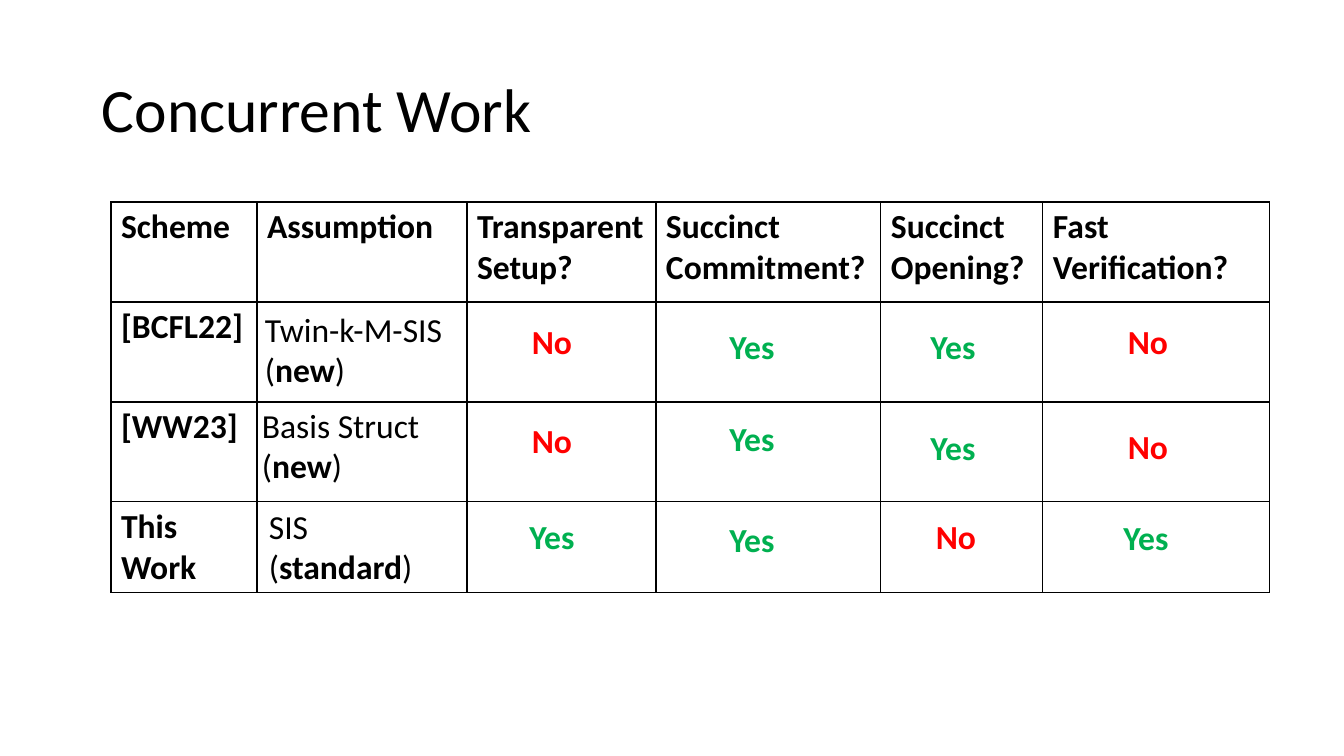
from lxml import etree
from pptx import Presentation, util as u
from pptx.dml.color import RGBColor
from pptx.enum import text
from pptx.oxml import ns

SCALE = 914400 / 100.8
BLACK, RED, GREEN = "000000", "FF0000", "00B050"


def px(n):
    return u.Emu(round(n * SCALE))


def write(tf, lines, size=24, color=BLACK, bold=False, align=None, spacing=None):
    for i, line in enumerate(lines):
        p = tf.paragraphs[0] if i == 0 else tf.add_paragraph()
        p.alignment = align
        p.line_spacing = spacing
        for j, part in enumerate(line.split("*")):
            r = p.add_run()
            r.text = part
            r.font.name = "Calibri"
            r.font.size = u.Pt(size)
            r.font.bold = bold or j % 2 == 1
            r.font.color.rgb = RGBColor.from_string(color)


prs = Presentation()
prs.slide_width, prs.slide_height = px(1344), px(756)
s = prs.slides.add_slide(prs.slide_layouts[6])

tf = s.shapes.add_textbox(px(92), px(40), px(1159), px(146)).text_frame
tf.word_wrap = True
tf.vertical_anchor = text.MSO_ANCHOR.MIDDLE
write(tf, ["Concurrent Work"], size=44, spacing=0.9)

headers = ["Scheme", "Assumption", "Transparent Setup?", "Succinct Commitment?",
           "Succinct Opening?", "Fast Verification?"]
schemes = ["[BCFL22]", "[WW23]", "This Work"]
widths = [146, 210, 189, 225, 162, 227]
heights = [100, 100, 100, 85]

table = s.shapes.add_table(len(heights), len(widths), px(111), px(202),
                           px(sum(widths)), px(sum(heights))).table
table.first_row = table.horz_banding = False
for column, width in zip(table.columns, widths):
    column.width = px(width)
for row, height in zip(table.rows, heights):
    row.height = px(height)
for c, header in enumerate(headers):
    write(table.cell(0, c).text_frame, [header], bold=True)
for r, scheme in enumerate(schemes, 1):
    write(table.cell(r, 0).text_frame, [scheme], bold=True)
for cell in table.iter_cells():
    tcPr = cell._tc.get_or_add_tcPr()
    for side in ("lnL", "lnR", "lnT", "lnB"):
        ln = etree.SubElement(tcPr, ns.qn(f"a:{side}"), w=str(u.Pt(1)))
        fill = etree.SubElement(ln, ns.qn("a:solidFill"))
        etree.SubElement(fill, ns.qn("a:srgbClr"), val=BLACK)
    cell.fill.background()

assumptions = [
    (255, 304, ["Twin-k-M-SIS (*new*)"]),
    (252, 400, ["Basis Struct (*new*)"]),
    (259, 501, ["SIS", "(*standard*)"]),
]
for x, y, lines in assumptions:
    tf = s.shapes.add_textbox(px(x), px(y), px(212), px(92)).text_frame
    tf.word_wrap = True
    write(tf, lines)

verdicts = [
    (446, 316, "No"), (446, 415, "No"), (446, 511, "Yes"),
    (646, 321, "Yes"), (646, 413, "Yes"), (646, 514, "Yes"),
    (847, 321, "Yes"), (847, 422, "Yes"), (850, 511, "No"),
    (1042, 316, "No"), (1042, 421, "No"), (1040, 512, "Yes"),
]
for x, y, verdict in verdicts:
    tf = s.shapes.add_textbox(px(x), px(y), px(212), px(50)).text_frame
    tf.word_wrap = True
    write(tf, [verdict], color=GREEN if verdict == "Yes" else RED, bold=True,
          align=text.PP_ALIGN.CENTER)

prs.save("out.pptx")
